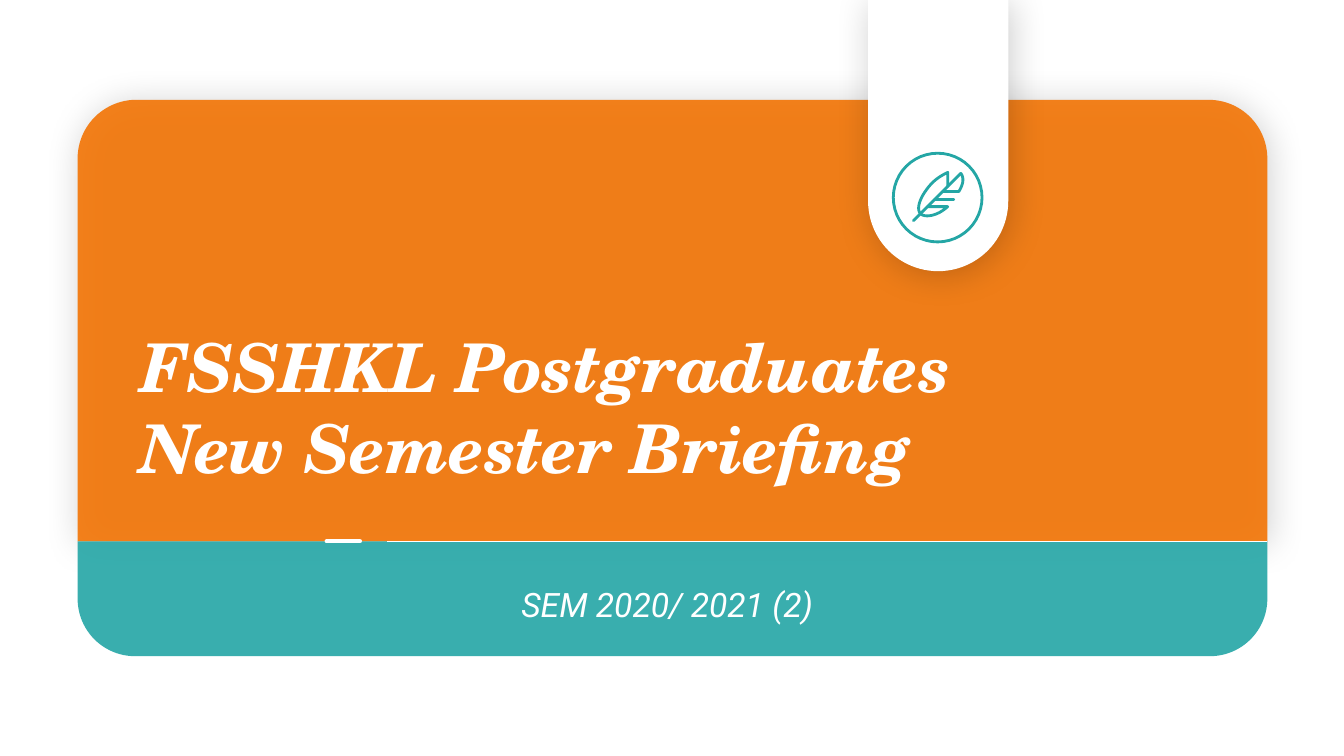
from lxml.etree import SubElement
from pptx import Presentation
from pptx.dml.color import RGBColor
from pptx.enum.shapes import MSO_CONNECTOR, MSO_SHAPE
from pptx.enum.text import MSO_ANCHOR, MSO_AUTO_SIZE, PP_ALIGN
from pptx.oxml.ns import qn
from pptx.util import Inches, Pt

ORANGE, TEAL, ICON_TEAL, WHITE = "F37404", "24A6A6", "24A6A5", "FFFFFF"
CARD_LEFT, CARD_WIDTH, SEAM = 0.77, 11.8, 5.37
CURVE_STEPS = 12
PEN = 2


def color(hex_value):
    return RGBColor.from_string(hex_value)


def set_attributes(target, values):
    for name, value in values.items():
        setattr(target, name, value)


def add_soft_shadow(shape):
    effects = shape._element.spPr.find(qn("a:effectLst"))
    shadow = SubElement(effects, qn("a:outerShdw"), blurRad=str(Pt(26)),
                        dist=str(Pt(3)), dir=str(45 * 60000), rotWithShape="0")
    black = SubElement(shadow, qn("a:srgbClr"), val="000000")
    SubElement(black, qn("a:alpha"), val="20000")


def add_panel(shapes, frame, corners, fill, opacity=100, shadow=False):
    """Add a rectangle with top and bottom corner rounding."""
    panel = shapes.add_shape(MSO_SHAPE.ROUND_2_SAME_RECTANGLE, *map(Inches, frame))
    panel.shadow.inherit = False
    for index, rounding in enumerate(corners):
        panel.adjustments[index] = rounding
    panel.fill.solid()
    panel.fill.fore_color.rgb = color(fill)
    panel.line.fill.background()
    if opacity < 100:
        tint = panel._element.spPr.find(qn("a:solidFill"))[0]
        SubElement(tint, qn("a:alpha"), val=str(opacity * 1000))
    if shadow:
        add_soft_shadow(panel)


def style_line(shape, hex_value, width, cap="rnd"):
    shape.line.color.rgb = color(hex_value)
    shape.line.width = Pt(width)
    shape.line._get_or_add_ln().set("cap", cap)


def add_line(shapes, start, end, hex_value, width, cap="rnd"):
    line = shapes.add_connector(MSO_CONNECTOR.STRAIGHT, *map(Inches, start + end))
    style_line(line, hex_value, width, cap)
    SubElement(line._element.spPr, qn("a:effectLst"))


def curve_points(start, first, second, end):
    """Sample a cubic Bezier curve, leaving out its start."""
    for step in range(1, CURVE_STEPS + 1):
        t = step / CURVE_STEPS
        weights = ((1 - t) ** 3, 3 * t * (1 - t) ** 2, 3 * t * t * (1 - t), t ** 3)
        yield tuple(
            sum(weight * value for weight, value in zip(weights, axis))
            for axis in zip(start, first, second, end)
        )


def add_outline(shapes, start, segments):
    """Add an open outline of straight (one point) and curved (three point) segments."""
    points = [start]
    for segment in segments:
        points.extend(segment if len(segment) == 1 else curve_points(points[-1], *segment))
    vertices = [(Inches(x), Inches(y)) for x, y in points]
    builder = shapes.build_freeform(*vertices[0])
    builder.add_line_segments(vertices[1:], close=False)
    outline = builder.convert_to_shape()
    outline.shadow.inherit = False
    outline.fill.background()
    style_line(outline, ICON_TEAL, PEN)


def add_feather_icon(page):
    shapes = page.shapes.add_group_shape().shapes
    ring = shapes.add_shape(MSO_SHAPE.OVAL, *map(Inches, (8.86, 1.52, 0.88, 0.88)))
    ring.shadow.inherit = False
    ring.fill.background()
    style_line(ring, ICON_TEAL, PEN)
    add_line(shapes, (9.53, 1.72), (9.06, 2.19), ICON_TEAL, PEN)
    add_outline(shapes, (9.13, 2.12), [
        [(9.08, 2.07), (9.13, 1.94), (9.24, 1.82)],
        [(9.3, 1.76), (9.36, 1.73), (9.4, 1.71)],
        [(9.4, 1.85)],
    ])
    add_line(shapes, (9.27, 1.98), (9.46, 1.98), ICON_TEAL, PEN)
    add_outline(shapes, (9.2, 2.05), [
        [(9.4, 2.05)],
        [(9.29, 2.15), (9.17, 2.16), (9.13, 2.12)],
    ])
    add_outline(shapes, (9.53, 1.72), [
        [(9.56, 1.76), (9.56, 1.82), (9.51, 1.9)],
        [(9.35, 1.9)],
    ])


def fill_placeholder(page, box, frame, text, anchor, alignment, font):
    """Place, write and format a placeholder, and bring it to the front."""
    left, top, width, height = map(Inches, frame)
    set_attributes(box, {"left": left, "top": top, "width": width, "height": height})
    box.text_frame.text = text
    set_attributes(box.text_frame, {
        "word_wrap": True, "vertical_anchor": anchor,
        "auto_size": MSO_AUTO_SIZE.SHAPE_TO_FIT_TEXT,
        "margin_left": 0, "margin_top": 0, "margin_right": 0, "margin_bottom": 0,
    })
    for para in box.text_frame.paragraphs:
        set_attributes(para, {"alignment": alignment, "line_spacing": 1.0,
                              "space_before": Pt(0), "space_after": Pt(0)})
        for span in para.runs:
            set_attributes(span.font, font)
            span.font.color.rgb = color(WHITE)
    page.shapes._spTree.append(box._element)


def main():
    deck = Presentation()
    set_attributes(deck, {"slide_width": Inches(13.33), "slide_height": Inches(7.5)})
    page = deck.slides.add_slide(deck.slide_layouts[0])
    shapes = page.shapes
    title, subtitle = page.placeholders

    add_panel(shapes, (CARD_LEFT, 0.99, CARD_WIDTH, SEAM - 0.99), (0.133, 0),
              ORANGE, opacity=90, shadow=True)
    fill_placeholder(page, title, (1.39, 3.21, 10.4, 1.62),
                     "FSSHKL Postgraduates\nNew Semester Briefing",
                     MSO_ANCHOR.BOTTOM, PP_ALIGN.LEFT,
                     {"name": "TeX Gyre Schola", "size": Pt(48), "bold": True, "italic": True})
    add_panel(shapes, (CARD_LEFT, SEAM, CARD_WIDTH, 1.14), (0, 0.5), TEAL, opacity=90)
    add_line(shapes, (3.84, SEAM), (CARD_LEFT + CARD_WIDTH, SEAM), WHITE, 0.5, cap="flat")
    fill_placeholder(page, subtitle, (2.73, 5.79, 7.86, 0.4), "SEM 2020/ 2021 (2) ",
                     MSO_ANCHOR.MIDDLE, PP_ALIGN.CENTER,
                     {"name": "Roboto", "size": Pt(24), "italic": True})
    add_panel(shapes, (8.61, 0, 1.39, 2.69), (0, 0.5), WHITE, shadow=True)
    add_line(shapes, (3.24, SEAM), (3.57, SEAM), WHITE, 3)
    add_feather_icon(page)
    deck.save("out.pptx")


if __name__ == "__main__":
    main()
